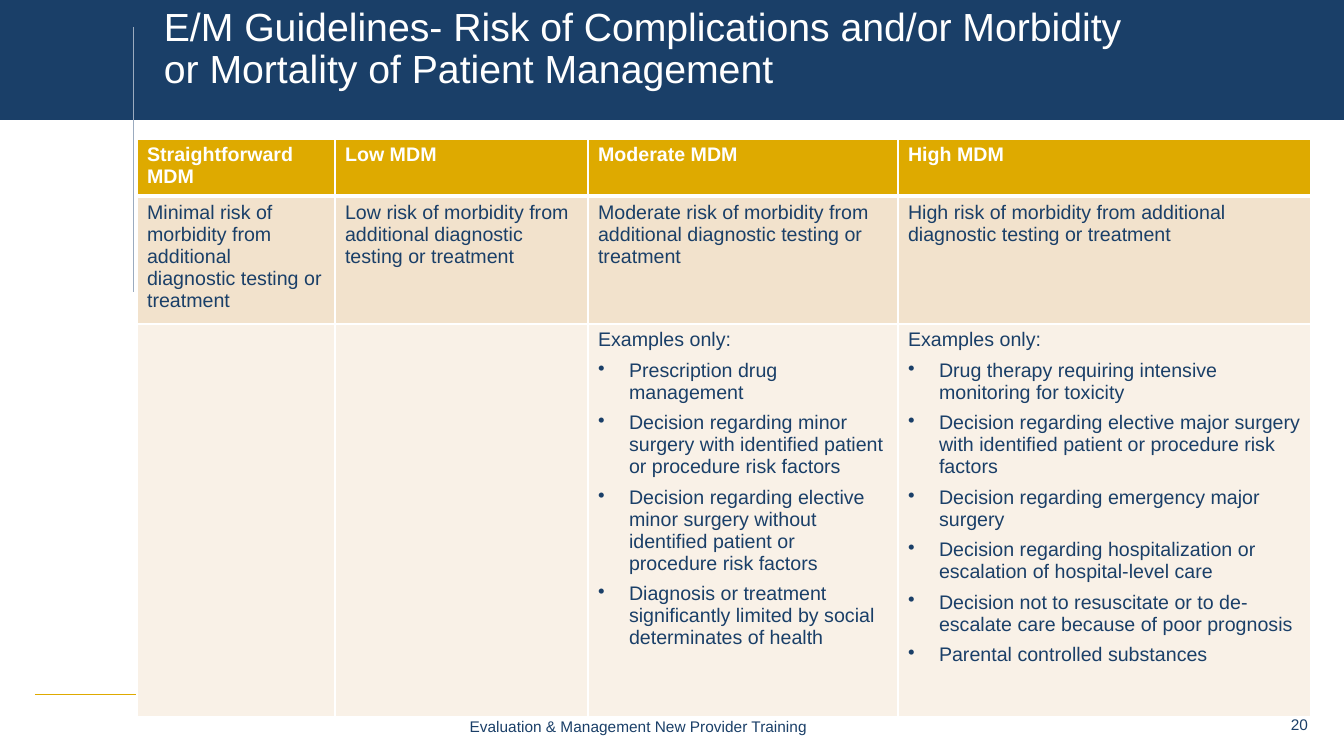
import dataclasses

import pptx
import pptx.dml.color
import pptx.enum.shapes
import pptx.enum.text
import pptx.oxml
import pptx.oxml.ns
import pptx.util

ALIGN = pptx.enum.text.PP_ALIGN
ANCHOR = pptx.enum.text.MSO_ANCHOR


@dataclasses.dataclass(frozen=True)
class Theme:
    font: str = "Arial"
    navy: str = "1A3F68"
    gold: str = "DEAA00"
    grey: str = "9BABBF"
    white: str = "FFFFFF"
    sand: str = "F2E2CC"
    cream: str = "F9F1E7"
    title_size: int = 28
    table_size: int = 14
    footer_size: int = 11


THEME = Theme()

TITLE = ("E/M Guidelines- Risk of Complications and/or Morbidity "
         "or Mortality of Patient Management")
FOOTER = "Evaluation & Management New Provider Training"
PAGE_NUMBER = "20"

COLUMN_WIDTHS = [198, 253, 310, 413]
ROW_HEIGHTS = [56, 121, 393]
LEVELS = ["Straightforward MDM", "Low MDM", "Moderate MDM", "High MDM"]
RISKS = [
    f"{level} risk of morbidity from additional diagnostic testing or treatment"
    for level in ("Minimal", "Low", "Moderate", "High")
]
EXAMPLES = [
    [],
    [],
    ["Prescription drug management",
     "Decision regarding minor surgery with identified patient or procedure risk factors",
     "Decision regarding elective minor surgery without identified patient "
     "or procedure risk factors",
     "Diagnosis or treatment significantly limited by social determinates of health"],
    ["Drug therapy requiring intensive monitoring for toxicity",
     "Decision regarding elective major surgery with identified patient "
     "or procedure risk factors",
     "Decision regarding emergency major surgery",
     "Decision regarding hospitalization or escalation of hospital-level care",
     "Decision not to resuscitate or to de-escalate care because of poor prognosis",
     "Parental controlled substances"],
]


def px(length):
    return pptx.util.Emu(round(length * 914400 / 100.8))


def rgb(color):
    return pptx.dml.color.RGBColor.from_string(color)


def write_text(paragraph, text, size, color, bold=False, align=ALIGN.LEFT,
               line_spacing=None, space_after=None, bullet=False):
    properties = paragraph._p.get_or_add_pPr()
    if bullet:
        properties.set("marL", str(px(31)))
        properties.set("indent", str(-px(31)))
        mark = pptx.oxml.parse_xml(
            f'<a:buChar {pptx.oxml.ns.nsdecls("a")} char="•"/>')
        properties.append(mark)
    paragraph.alignment = align
    if line_spacing is not None:
        paragraph.line_spacing = line_spacing
    if space_after is not None:
        paragraph.space_after = pptx.util.Pt(space_after)
    run = paragraph.add_run()
    run.text = text
    run.font.name = THEME.font
    run.font.size = pptx.util.Pt(size)
    run.font.bold = bold
    run.font.color.rgb = rgb(color)


def add_text(slide, box, text, right_inset=10, **text_format):
    shape = slide.shapes.add_textbox(*map(px, box))
    frame = shape.text_frame
    frame.word_wrap = True
    frame.vertical_anchor = ANCHOR.BOTTOM
    frame.margin_right = px(right_inset)
    write_text(frame.paragraphs[0], text, line_spacing=0.9, **text_format)


def add_line(slide, start, end, color):
    line = slide.shapes.add_connector(
        pptx.enum.shapes.MSO_CONNECTOR.STRAIGHT, *map(px, start + end))
    line.line.color.rgb = rgb(color)
    line.line.width = pptx.util.Pt(0.5)
    line._element.spPr.append(
        pptx.oxml.parse_xml(f'<a:effectLst {pptx.oxml.ns.nsdecls("a")}/>'))


def format_cell(cell, fill, bottom_width=1):
    properties = cell._tc.get_or_add_tcPr()
    for side, width in (("L", 1), ("R", 1), ("T", 1), ("B", bottom_width)):
        properties.append(pptx.oxml.parse_xml(
            f'<a:ln{side} {pptx.oxml.ns.nsdecls("a")} w="{pptx.util.Pt(width)}">'
            f'<a:solidFill><a:srgbClr val="{THEME.white}"/></a:solidFill></a:ln{side}>'))
    cell.fill.solid()
    cell.fill.fore_color.rgb = rgb(fill)


def add_header(slide, box):
    left, top, width, height = box
    # Navy band
    band = slide.shapes.add_shape(
        pptx.enum.shapes.MSO_SHAPE.RECTANGLE, *map(px, box))
    band.shadow.inherit = False
    band.fill.solid()
    band.fill.fore_color.rgb = rgb(THEME.navy)
    band.line.fill.background()
    # Vertical rule and title
    add_line(slide, (left + 133, top + 27), (left + 133, top + 292), THEME.grey)
    add_text(slide, (left + 154, top + 47, 1008, 50), TITLE,
             size=THEME.title_size, color=THEME.white)


def add_footer(slide, box):
    left, top, width, height = box
    # Gold rule
    add_line(slide, (left, top), (left + width, top), THEME.gold)
    # Footer text and page number
    add_text(slide, (left + 336, top + 14, 601, 33), FOOTER, right_inset=76,
             size=THEME.footer_size, color=THEME.navy, align=ALIGN.CENTER)
    add_text(slide, (left + width - 343, top + 10, 356, 35), PAGE_NUMBER,
             right_inset=14, size=THEME.footer_size, color=THEME.navy,
             align=ALIGN.RIGHT)


def add_risk_table(slide, left, top):
    table = slide.shapes.add_table(
        len(ROW_HEIGHTS), len(COLUMN_WIDTHS), px(left), px(top),
        px(sum(COLUMN_WIDTHS)), px(sum(ROW_HEIGHTS))).table
    for row, height in zip(table.rows, ROW_HEIGHTS):
        row.height = px(height)
    for index, width in enumerate(COLUMN_WIDTHS):
        table.columns[index].width = px(width)
        level, risk, examples = (table.cell(row, index) for row in range(3))
        # Level and its risk
        format_cell(level, THEME.gold, bottom_width=3)
        write_text(level.text_frame.paragraphs[0], LEVELS[index],
                   THEME.table_size, THEME.white, bold=True)
        format_cell(risk, THEME.sand)
        write_text(risk.text_frame.paragraphs[0], RISKS[index],
                   THEME.table_size, THEME.navy)
        # Bulleted examples
        format_cell(examples, THEME.cream)
        if EXAMPLES[index]:
            frame = examples.text_frame
            write_text(frame.paragraphs[0], "Examples only:",
                       THEME.table_size, THEME.navy, space_after=6)
            for example in EXAMPLES[index]:
                write_text(frame.add_paragraph(), example, THEME.table_size,
                           THEME.navy, space_after=6, bullet=True)


def main():
    presentation = pptx.Presentation()
    presentation.slide_width = px(1344)
    presentation.slide_height = px(756)
    slide = presentation.slides.add_slide(presentation.slide_layouts[6])
    add_footer(slide, (35, 694, 1274, 48))
    add_header(slide, (0, 0, 1344, 120))
    add_risk_table(slide, 137, 139)
    presentation.save("out.pptx")


if __name__ == "__main__":
    main()
